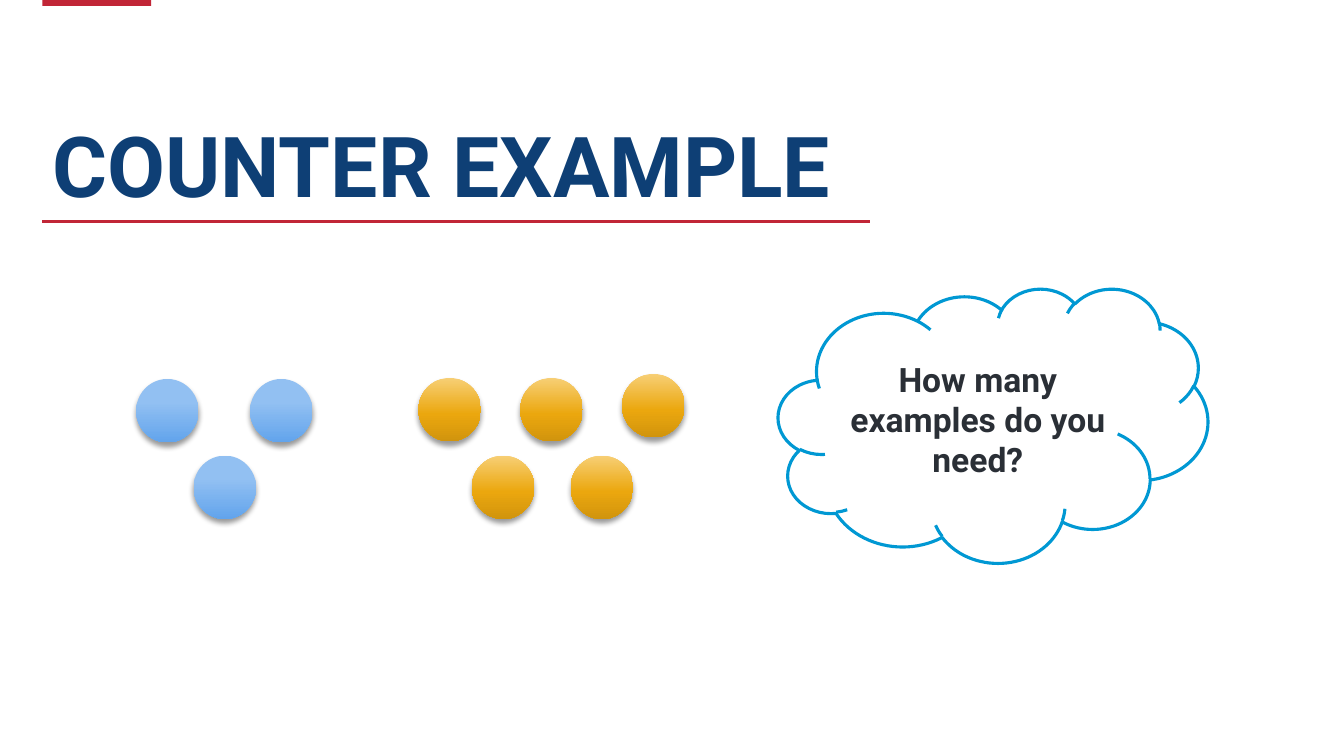
from dataclasses import dataclass

from lxml import etree
from pptx import Presentation
from pptx.dml.color import RGBColor
from pptx.enum.shapes import MSO_CONNECTOR as Connector, MSO_SHAPE as Preset
from pptx.enum.text import MSO_ANCHOR as Anchor, MSO_AUTO_SIZE as AutoSize, PP_ALIGN as Align
from pptx.oxml.ns import qn
from pptx.util import Inches, Pt


@dataclass(frozen=True)
class Theme:
    font: str = "Roboto"
    title_size: int = 60
    title_leading: int = 62
    cloud_size: int = 24
    navy: str = "0E3F75"
    red: str = "C12637"
    sky: str = "0098D3"
    ink: str = "2A2F36"
    white: str = "FFFFFF"
    shadow: str = "000000"
    # Gradient stops: percent along the way, colour
    blue_counter: tuple = ((0, "92C0F2"), (36, "92C0F2"), (100, "62A4EC"))
    gold_counter: tuple = ((0, "F7CF75"), (57, "EBA70E"), (100, "D1940D"))


class SlideBuilder:
    def __init__(self, slide, theme):
        self.slide = slide
        self.theme = theme

    def add_run(self, paragraph, text, size, color):
        run = paragraph.add_run()
        run.text = text
        run.font.name = self.theme.font
        run.font.size = Pt(size)
        run.font.bold = True
        run.font.color.rgb = RGBColor.from_string(color)

    def add_title(self, text, left, top, width, height):
        title = self.slide.shapes.title
        title.left, title.top = Inches(left), Inches(top)
        title.width, title.height = Inches(width), Inches(height)
        frame = title.text_frame
        frame.auto_size = AutoSize.NONE
        frame.word_wrap = True
        frame.vertical_anchor = Anchor.MIDDLE
        paragraph = frame.paragraphs[0]
        paragraph.alignment = Align.LEFT
        paragraph.line_spacing = Pt(self.theme.title_leading)
        self.add_run(paragraph, text, self.theme.title_size, self.theme.navy)

    def add_shape(self, preset, left, top, width, height, fill=None):
        shape = self.slide.shapes.add_shape(
            preset, Inches(left), Inches(top), Inches(width), Inches(height))
        shape.shadow.inherit = False
        shape.line.fill.background()
        if fill:
            shape.fill.solid()
            shape.fill.fore_color.rgb = RGBColor.from_string(fill)
        return shape

    def add_rule(self, left, right, y, color, weight):
        rule = self.slide.shapes.add_connector(
            Connector.STRAIGHT, Inches(left), Inches(y), Inches(right), Inches(y))
        rule.line.color.rgb = RGBColor.from_string(color)
        rule.line.width = Pt(weight)
        etree.SubElement(rule._element.spPr, qn("a:effectLst"))

    def add_cloud(self, text, left, top, width, height):
        cloud = self.add_shape(Preset.CLOUD, left, top, width, height, self.theme.white)
        cloud.line.color.rgb = RGBColor.from_string(self.theme.sky)
        cloud.line.width = Pt(2.25)
        frame = cloud.text_frame
        frame.word_wrap = True
        frame.vertical_anchor = Anchor.MIDDLE
        paragraph = frame.paragraphs[0]
        paragraph.alignment = Align.CENTER
        self.add_run(paragraph, text, self.theme.cloud_size, self.theme.ink)

    def add_counter(self, left, top, stops):
        counter = self.add_shape(Preset.OVAL, left, top, 0.62, 0.63)
        counter.fill.gradient()
        counter.fill.gradient_angle = 270
        properties = counter._element.spPr

        # Gradient stops
        stop_list = properties.find(".//" + qn("a:gsLst"))
        for stop in list(stop_list):
            stop_list.remove(stop)
        for percent, color in stops:
            stop = etree.SubElement(stop_list, qn("a:gs"), pos=str(percent * 1000))
            etree.SubElement(stop, qn("a:srgbClr"), val=color)

        # Soft shadow below
        shadow = etree.SubElement(
            properties.find(qn("a:effectLst")), qn("a:outerShdw"),
            blurRad=str(Pt(4)), dist=str(Pt(3)), dir="5400000", rotWithShape="0")
        shade = etree.SubElement(shadow, qn("a:srgbClr"), val=self.theme.shadow)
        etree.SubElement(shade, qn("a:alpha"), val="40000")


def main():
    presentation = Presentation()
    presentation.slide_width, presentation.slide_height = Inches(13.33), Inches(7.5)
    theme = Theme()
    slide = presentation.slides.add_slide(presentation.slide_layouts[5])
    builder = SlideBuilder(slide, theme)

    # Heading with red tab and rule
    builder.add_shape(Preset.RECTANGLE, 0.42, 0, 1.08, 0.06, theme.red)
    builder.add_rule(0.42, 8.63, 2.2, theme.red, 2)
    builder.add_title("COUNTER EXAMPLE", 0.42, 1.21, 12.12, 0.97)

    # Question
    builder.add_cloud("How many examples do you need?", 7.72, 2.86, 4.26, 2.72)

    # Three blue and five gold counters
    groups = (
        (theme.blue_counter, ((1.35, 3.76), (1.92, 4.52), (2.48, 3.76))),
        (theme.gold_counter, ((4.15, 3.75), (4.68, 4.52), (5.66, 4.52),
                              (6.17, 3.71), (5.16, 3.75))),
    )
    for stops, positions in groups:
        for left, top in positions:
            builder.add_counter(left, top, stops)

    presentation.save("out.pptx")


if __name__ == "__main__":
    main()
